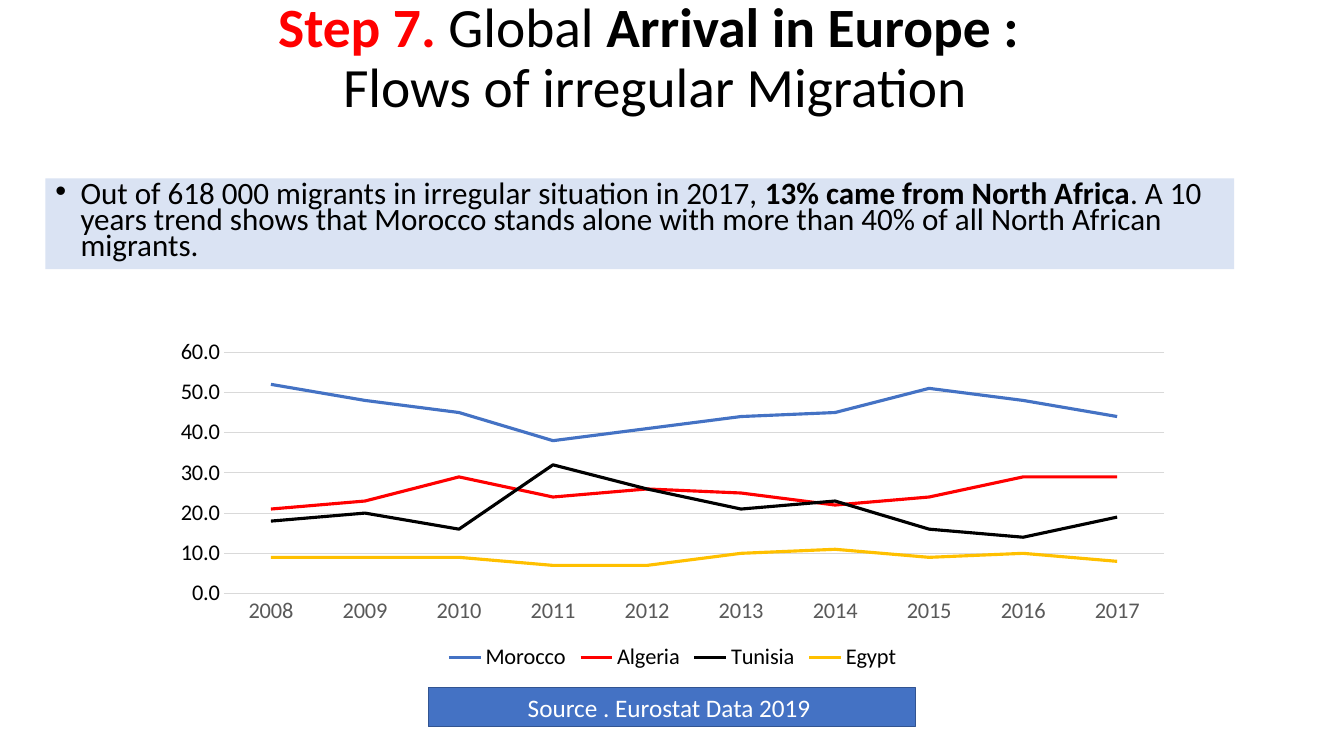
from lxml.etree import SubElement
from pptx import Presentation
from pptx.chart.data import CategoryChartData
from pptx.dml.color import RGBColor
from pptx.enum.chart import XL_CHART_TYPE, XL_LEGEND_POSITION, XL_MARKER_STYLE, XL_TICK_MARK
from pptx.enum.shapes import MSO_SHAPE
from pptx.enum.text import MSO_ANCHOR, PP_ALIGN
from pptx.oxml.ns import qn
from pptx.util import Inches, Pt

COLORS = {
    "text": "000000", "accent": "FF0000", "panel": "DAE3F3", "source": "4472C4",
    "source_edge": "325491", "white": "FFFFFF", "grid": "D9D9D9", "years": "595959",
    "Morocco": "4472C4", "Algeria": "FF0000", "Tunisia": "000000", "Egypt": "FFC000",
}
YEARS = [str(year) for year in range(2008, 2018)]
SHARES = {
    "Morocco": [52, 48, 45, 38, 41, 44, 45, 51, 48, 44],
    "Algeria": [21, 23, 29, 24, 26, 25, 22, 24, 29, 29],
    "Tunisia": [18, 20, 16, 32, 26, 21, 23, 16, 14, 19],
    "Egypt": [9, 9, 9, 7, 7, 10, 11, 9, 10, 8],
}


def color(name):
    return RGBColor.from_string(COLORS[name])


def set_attributes(target, **values):
    for name, value in values.items():
        setattr(target, name, value)


def set_font(font, size, name="text", bold=False):
    set_attributes(font, name="Calibri", size=Pt(size), bold=bold)
    font.color.rgb = color(name)


def add_span(para, text, size, name="text", bold=False):
    span = para.add_run()
    span.text = text
    set_font(span.font, size, name, bold)


def add_panel(page, box, fill):
    panel = page.shapes.add_shape(MSO_SHAPE.RECTANGLE, *map(Inches, box))
    panel.shadow.inherit = False
    panel.fill.solid()
    panel.fill.fore_color.rgb = color(fill)
    panel.text_frame.word_wrap = True
    return panel


def add_title(page, box):
    frame = page.shapes.add_textbox(*map(Inches, box)).text_frame
    set_attributes(frame, word_wrap=True, vertical_anchor=MSO_ANCHOR.TOP, margin_top=0)
    para = frame.paragraphs[0]
    set_attributes(para, alignment=PP_ALIGN.CENTER, line_spacing=0.9)
    add_span(para, "Step 7.", 39.6, "accent", True)
    add_span(para, " Global ", 39.6)
    add_span(para, "Arrival in Europe : ", 39.6, bold=True)
    para.add_line_break()
    add_span(para, "Flows of irregular Migration", 39.6)


def add_finding(page, box):
    panel = add_panel(page, box, "panel")
    panel.line.fill.background()
    panel.text_frame.vertical_anchor = MSO_ANCHOR.TOP
    para = panel.text_frame.paragraphs[0]
    set_attributes(para, alignment=PP_ALIGN.LEFT, line_spacing=0.7)
    properties = para._p.get_or_add_pPr()
    properties.set("marL", str(Inches(0.25)))
    properties.set("indent", str(Inches(-0.25)))
    SubElement(properties, qn("a:buFont")).set("typeface", "Arial")
    SubElement(properties, qn("a:buChar")).set("char", "•")
    add_span(para, "Out of 618 000 migrants in irregular situation in 2017, ", 22.2)
    add_span(para, "13% came from North Africa", 22.2, bold=True)
    add_span(para, ". A 10 years trend shows that Morocco stands alone with more than "
             "40% of all North African migrants.", 22.2)


def add_trend_chart(page, box):
    data = CategoryChartData(number_format="0.0")
    data.categories = YEARS
    for country, shares in SHARES.items():
        data.add_series(country, shares)
    chart = page.shapes.add_chart(XL_CHART_TYPE.LINE, *map(Inches, box), data).chart
    set_attributes(chart, has_title=False, has_legend=True)
    set_font(chart.font, 16)
    set_attributes(chart.legend, position=XL_LEGEND_POSITION.BOTTOM, include_in_layout=False)
    set_font(chart.legend.font, 16)
    chart.plots[0].vary_by_categories = False

    for axis, label in ((chart.category_axis, "years"), (chart.value_axis, "text")):
        set_attributes(axis, major_tick_mark=XL_TICK_MARK.NONE, minor_tick_mark=XL_TICK_MARK.NONE)
        set_font(axis.tick_labels.font, 16, label)
    values = chart.value_axis
    set_attributes(values, minimum_scale=0, maximum_scale=60, major_unit=10,
                   has_major_gridlines=True)
    set_attributes(values.tick_labels, number_format="0.0", number_format_is_linked=False)
    values.format.line.fill.background()
    for line in (chart.category_axis.format.line, values.major_gridlines.format.line):
        line.color.rgb = color("grid")
        line.width = Pt(0.75)

    for series in chart.plots[0].series:
        series.smooth = False
        series.marker.style = XL_MARKER_STYLE.NONE
        series.format.line.color.rgb = color(series.name)
        series.format.line.width = Pt(2.25)


def add_source(page, box):
    panel = add_panel(page, box, "source")
    panel.line.color.rgb = color("source_edge")
    panel.line.width = Pt(1)
    panel.text_frame.vertical_anchor = MSO_ANCHOR.MIDDLE
    para = panel.text_frame.paragraphs[0]
    para.alignment = PP_ALIGN.CENTER
    add_span(para, "Source . Eurostat Data 2019 ", 18, "white")


def main():
    deck = Presentation()
    set_attributes(deck, slide_width=Inches(13.33), slide_height=Inches(7.5))
    page = deck.slides.add_slide(deck.slide_layouts[6])
    add_title(page, (0, 0, 12.99, 1.77))
    add_finding(page, (0.45, 1.77, 11.79, 0.9))
    add_trend_chart(page, (1.59, 3.29, 10.16, 3.41))
    add_source(page, (4.25, 6.82, 4.83, 0.39))
    deck.save("out.pptx")


if __name__ == "__main__":
    main()
